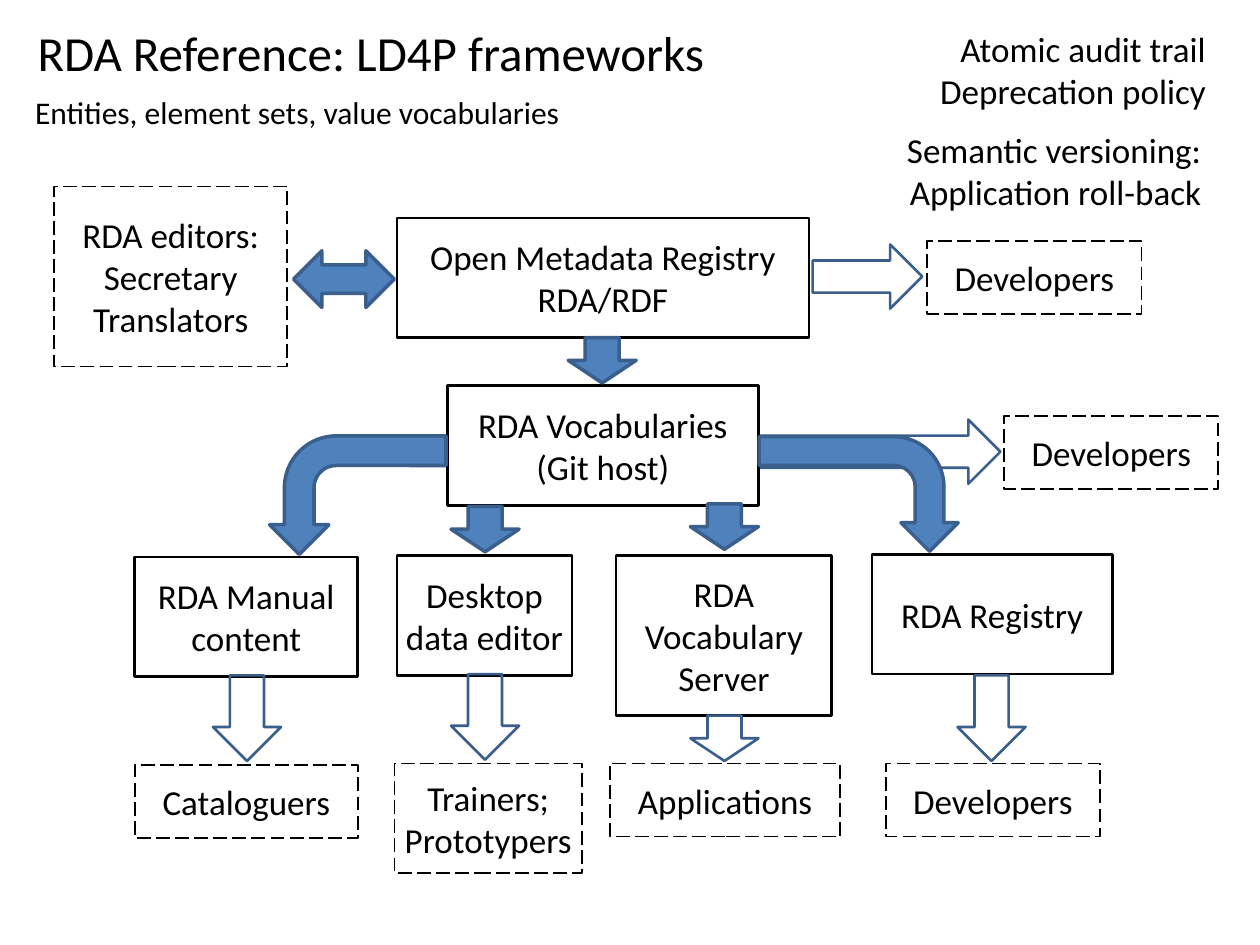
from dataclasses import dataclass
from typing import Any

from pptx import Presentation
from pptx.dml.color import RGBColor
from pptx.enum.dml import MSO_LINE_DASH_STYLE as Dash
from pptx.enum.shapes import MSO_AUTO_SHAPE_TYPE as ShapeType
from pptx.enum.text import MSO_ANCHOR as Anchor
from pptx.enum.text import MSO_AUTO_SIZE as AutoSize
from pptx.enum.text import PP_ALIGN as Align
from pptx.util import Inches, Pt

COLORS = {"ink": "000000", "paper": "FFFFFF", "arrow": "4F81BD", "arrow_edge": "3A5F8C"}
BOX_FRAME = {"word_wrap": False, "vertical_anchor": Anchor.MIDDLE}
CAPTION_FRAME = {"word_wrap": False, "auto_size": AutoSize.SHAPE_TO_FIT_TEXT}
SYSTEM_LINE = {"width": Pt(1.5)}
AUDIENCE_LINE = {"width": Pt(1), "dash_style": Dash.LONG_DASH}
DOWN_WIDTH = 0.54
SHORT, LONG = 0.36, 0.68


@dataclass
class Box:
    lines: list[str]
    left: float
    top: float
    width: float
    height: float = 0.95


@dataclass
class Arrow:
    left: float
    top: float
    width: float
    height: float
    kind: ShapeType = ShapeType.DOWN_ARROW
    filled: bool = False
    rotation: int = 0
    flips: tuple[str, ...] = ()


@dataclass
class Caption:
    lines: list[str]
    left: float
    top: float
    width: float
    height: float
    size: int
    aligns: tuple[Align, ...]


# Systems: solid frames
SYSTEMS = [
    Box(["Open Metadata Registry", "RDA/RDF"], 3.15, 1.73, 3.27),
    Box(["RDA Vocabularies", "(Git host)"], 3.55, 3.06, 2.47),
    Box(["RDA Manual", "content"], 1.07, 4.42, 1.77),
    Box(["Desktop", "data editor"], 3.15, 4.41, 1.39),
    Box(["RDA", "Vocabulary", "Server"], 4.89, 4.41, 1.71, 1.27),
    Box(["RDA Registry"], 6.92, 4.4, 1.91),
]

# Audiences: dashed frames
AUDIENCES = [
    Box(["RDA editors:", "Secretary", "Translators"], 0.43, 1.48, 1.85, 1.43),
    Box(["Developers"], 7.36, 1.91, 1.7, 0.58),
    Box(["Developers"], 7.97, 3.3, 1.7, 0.58),
    Box(["Cataloguers"], 1.07, 6.07, 1.77, 0.58),
    Box(["Trainers;", "Prototypers"], 3.13, 6.06, 1.49, 0.87),
    Box(["Applications"], 4.84, 6.06, 1.83, 0.58),
    Box(["Developers"], 7.03, 6.06, 1.7, 0.58),
]

# Arrows: filled between systems, hollow towards audiences
VOCABULARY_ARROW = Arrow(6.02, 3.33, 1.92, 0.51, ShapeType.RIGHT_ARROW)
ARROWS = [
    Arrow(2.37, 3.23, 0.94, 1.4, ShapeType.BENT_ARROW, True, 90, ("flipV",)),
    Arrow(6.36, 3.13, 0.91, 1.58, ShapeType.BENT_ARROW, True, 270, ("flipH", "flipV")),
    Arrow(2.33, 1.99, 0.8, 0.45, ShapeType.LEFT_RIGHT_ARROW, True),
    Arrow(6.45, 1.94, 0.87, 0.51, ShapeType.RIGHT_ARROW),
    *(Arrow(left, top, DOWN_WIDTH, SHORT, filled=True)
      for left, top in [(4.51, 2.68), (3.58, 4.02), (5.48, 4)]),
    *(Arrow(left, top, DOWN_WIDTH, height)
      for left, top, height in [(1.69, 5.36, LONG), (3.58, 5.35, LONG),
                                (5.48, 5.68, SHORT), (7.6, 5.36, LONG)]),
]

CAPTIONS = [
    Caption(["RDA Reference: LD4P frameworks"], 0.2, 0.13, 5.55, 0.57, 28, (Align.LEFT,)),
    Caption(["Entities, element sets, value vocabularies"], 0.18, 0.69, 4.41, 0.4, 18,
            (Align.LEFT,)),
    Caption(["Atomic audit trail", "Deprecation policy"], 7.34, 0.17, 2.33, 0.77, 20,
            (Align.RIGHT, Align.RIGHT)),
    Caption(["Semantic versioning:", "Application roll-back"], 7.1, 0.97, 2.56, 0.77, 20,
            (Align.LEFT, Align.RIGHT)),
]


def color(name: str) -> RGBColor:
    return RGBColor.from_string(COLORS[name])


def apply(target: Any, values: dict[str, Any]) -> None:
    for name, value in values.items():
        setattr(target, name, value)


def place(item: Box | Arrow | Caption) -> tuple[Inches, ...]:
    return tuple(Inches(value) for value in (item.left, item.top, item.width, item.height))


def write_lines(frame: Any, lines: list[str], aligns: tuple[Align, ...], size: int) -> None:
    for index, (line, align) in enumerate(zip(lines, aligns)):
        paragraph = frame.add_paragraph() if index else frame.paragraphs[0]
        paragraph.alignment = align
        run = paragraph.add_run()
        run.text = line
        apply(run.font, {"name": "Calibri", "size": Pt(size)})
        run.font.color.rgb = color("ink")


def draw_box(slide: Any, box: Box, line_format: dict[str, Any]) -> None:
    shape = slide.shapes.add_shape(ShapeType.RECTANGLE, *place(box))
    shape.shadow.inherit = False
    shape.fill.solid()
    shape.fill.fore_color.rgb = color("paper")
    shape.line.color.rgb = color("ink")
    apply(shape.line, line_format)
    apply(shape.text_frame, BOX_FRAME)
    write_lines(shape.text_frame, box.lines, (Align.CENTER,) * len(box.lines), 20)


def draw_arrow(slide: Any, arrow: Arrow) -> None:
    shape = slide.shapes.add_shape(arrow.kind, *place(arrow))
    shape.shadow.inherit = False
    if arrow.filled:
        shape.fill.solid()
        shape.fill.fore_color.rgb = color("arrow")
    else:
        shape.fill.background()
    shape.line.color.rgb = color("arrow_edge")
    shape.line.width = Pt(2 if arrow.filled else 1.5)
    shape.rotation = arrow.rotation
    for flip in arrow.flips:
        shape.element.spPr.xfrm.set(flip, "1")


def draw_caption(slide: Any, caption: Caption) -> None:
    frame = slide.shapes.add_textbox(*place(caption)).text_frame
    apply(frame, CAPTION_FRAME)
    write_lines(frame, caption.lines, caption.aligns, caption.size)


def main() -> None:
    presentation = Presentation()
    apply(presentation, {"slide_width": Inches(10), "slide_height": Inches(7.5)})
    slide = presentation.slides.add_slide(presentation.slide_layouts[6])

    # The hollow vocabulary arrow lies behind the bent one
    draw_arrow(slide, VOCABULARY_ARROW)
    for box in SYSTEMS:
        draw_box(slide, box, SYSTEM_LINE)
    for box in AUDIENCES:
        draw_box(slide, box, AUDIENCE_LINE)
    for arrow in ARROWS:
        draw_arrow(slide, arrow)
    for caption in CAPTIONS:
        draw_caption(slide, caption)

    presentation.save("out.pptx")


if __name__ == "__main__":
    main()
